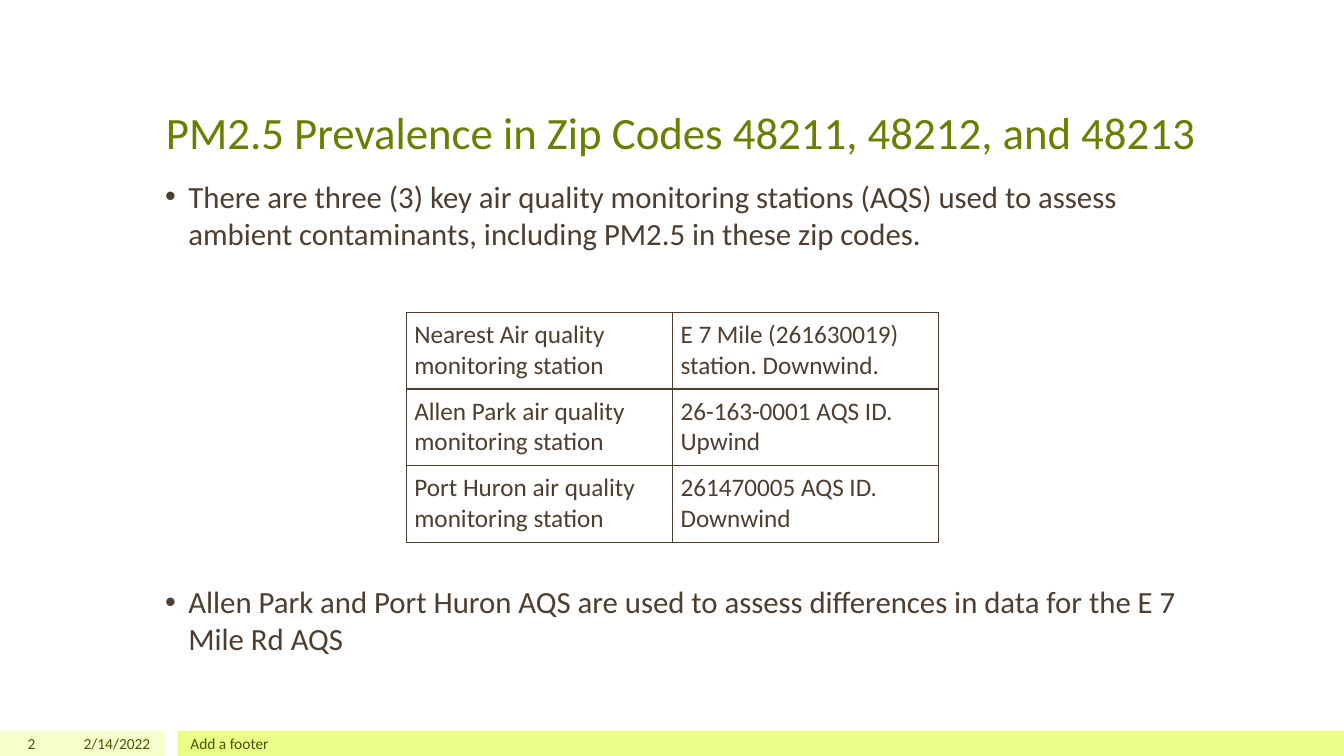
from lxml.etree import SubElement
from pptx import Presentation
from pptx.dml.color import RGBColor
from pptx.enum.shapes import MSO_SHAPE
from pptx.enum.text import MSO_ANCHOR, PP_ALIGN
from pptx.oxml.ns import qn
from pptx.util import Inches, Pt

TITLE = "PM2.5 Prevalence in Zip Codes 48211, 48212, and 48213 "
BULLETS = [
    "There are three (3) key air quality monitoring stations (AQS) used to assess "
    "ambient contaminants, including PM2.5 in these zip codes.",
    "Allen Park and Port Huron AQS are used to assess differences in data for the "
    "E 7 Mile Rd AQS",
]
STATIONS = [
    ("Nearest Air quality monitoring station", "E 7 Mile (261630019) station. Downwind."),
    ("Allen Park air quality monitoring station", "26-163-0001 AQS ID. Upwind"),
    ("Port Huron air quality monitoring station", "261470005 AQS ID. Downwind"),
]
FONT, GREEN, BROWN, DARK_GREEN = "Calibri", "688000", "4D3E2F", "455500"
FOOTER_TOP, FOOTER_HEIGHT = 7.25, 0.25
# left, width, fill
FOOTER_BARS = [(0, 1.64, "F6FFCC"), (1.76, 11.57, "E9FF88")]
# text, left, width, alignment
FOOTER_TEXTS = [
    ("2", 0, 0.45, PP_ALIGN.RIGHT),
    ("2/14/2022", 0.5, 1.09, PP_ALIGN.RIGHT),
    ("Add a footer", 1.79, 10, PP_ALIGN.LEFT),
]
TABLE_LEFT, TABLE_TOP, COLUMN_WIDTH, ROW_HEIGHT = 4.03, 3.1, 2.64, 0.76
TABLE_GAP = 237  # points between the bullets, leaving room for the table


def color(hex_value):
    return RGBColor.from_string(hex_value)


def box(left, top, width, height):
    return [Inches(value) for value in (left, top, width, height)]


def write(paragraph, text, size, fill, align=PP_ALIGN.LEFT):
    paragraph.alignment = align
    run = paragraph.add_run()
    run.text = text
    run.font.name = FONT
    run.font.size = Pt(size)
    run.font.color.rgb = color(fill)


def add_bullet(paragraph):
    properties = paragraph._p.get_or_add_pPr()
    properties.set("marL", str(Inches(0.23)))
    properties.set("indent", str(-Inches(0.23)))
    SubElement(properties, qn("a:buFont"), typeface="Arial")
    SubElement(properties, qn("a:buChar"), char="•")


def add_borders(cell):
    """Draw all four cell edges; they must precede the cell's fill."""
    properties = cell._tc.get_or_add_tcPr()
    for index, edge in enumerate(("lnL", "lnR", "lnT", "lnB")):
        line = SubElement(properties, qn(f"a:{edge}"), w=str(Pt(1)))
        fill = SubElement(line, qn("a:solidFill"))
        SubElement(fill, qn("a:srgbClr"), val=BROWN)
        properties.insert(index, line)


def add_text_box(slide, bounds, anchor=MSO_ANCHOR.TOP):
    frame = slide.shapes.add_textbox(*bounds).text_frame
    frame.word_wrap = True
    frame.vertical_anchor = anchor
    return frame


def add_title(slide):
    title = slide.shapes.title
    title.left, title.top, title.width, title.height = box(1.54, 0.3, 10.53, 1.29)
    title.text_frame.vertical_anchor = MSO_ANCHOR.BOTTOM
    title.text_frame.margin_bottom = Inches(0.02)
    write(title.text_frame.paragraphs[0], TITLE, 32, GREEN, PP_ALIGN.CENTER)


def add_body(slide):
    frame = add_text_box(slide, box(1.54, 1.71, 10.25, 5.05))
    for index, text in enumerate(BULLETS):
        paragraph = frame.add_paragraph() if index else frame.paragraphs[0]
        paragraph.space_before = Pt(TABLE_GAP if index else 0)
        write(paragraph, text, 22, BROWN)
        add_bullet(paragraph)


def add_station_table(slide):
    rows, columns = len(STATIONS), len(STATIONS[0])
    bounds = box(TABLE_LEFT, TABLE_TOP, columns * COLUMN_WIDTH, rows * ROW_HEIGHT)
    table = slide.shapes.add_table(rows, columns, *bounds).table
    table.first_row = table.horz_banding = False
    for row, texts in enumerate(STATIONS):
        for column, text in enumerate(texts):
            cell = table.cell(row, column)
            cell.margin_left = cell.margin_right = Inches(0.08)
            cell.margin_top = cell.margin_bottom = Inches(0.07)
            cell.fill.background()
            add_borders(cell)
            write(cell.text_frame.paragraphs[0], text, 18, BROWN)


def add_footer(slide):
    for left, width, fill in FOOTER_BARS:
        bar = slide.shapes.add_shape(
            MSO_SHAPE.RECTANGLE, *box(left, FOOTER_TOP, width, FOOTER_HEIGHT))
        bar.shadow.inherit = False
        bar.fill.solid()
        bar.fill.fore_color.rgb = color(fill)
        bar.line.fill.background()
    for text, left, width, align in FOOTER_TEXTS:
        bounds = box(left, FOOTER_TOP, width, FOOTER_HEIGHT)
        frame = add_text_box(slide, bounds, MSO_ANCHOR.MIDDLE)
        write(frame.paragraphs[0], text, 11, DARK_GREEN, align)


def main():
    presentation = Presentation()
    presentation.slide_width, presentation.slide_height = Inches(13.33), Inches(7.5)
    slide = presentation.slides.add_slide(presentation.slide_layouts[5])
    add_title(slide)
    add_body(slide)
    add_footer(slide)
    add_station_table(slide)
    presentation.save("out.pptx")


if __name__ == "__main__":
    main()
